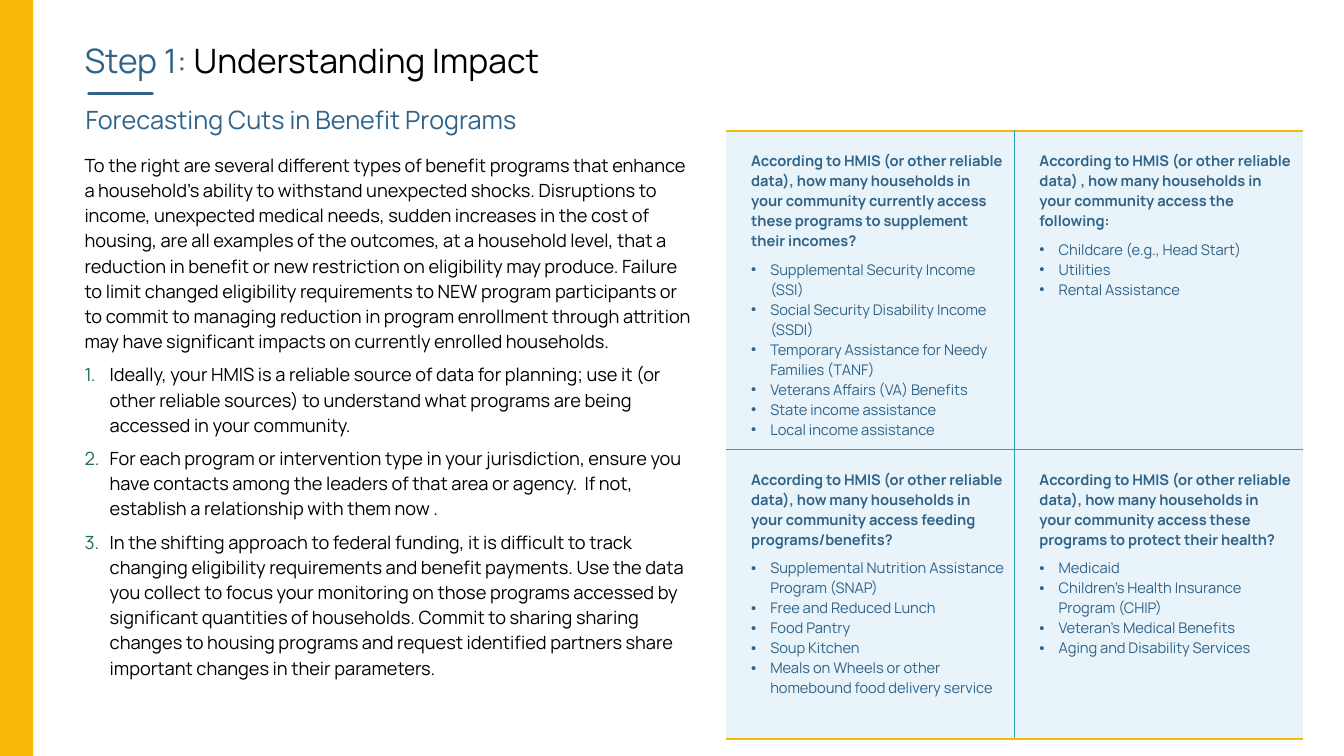
from lxml import etree
from pptx import Presentation
from pptx.dml.color import RGBColor
from pptx.enum.shapes import MSO_CONNECTOR, MSO_SHAPE
from pptx.enum.text import MSO_AUTO_SIZE
from pptx.oxml.ns import qn
from pptx.util import Inches, Pt

RECT = MSO_SHAPE.RECTANGLE
LINE = MSO_CONNECTOR.STRAIGHT
GROW = MSO_AUTO_SIZE.SHAPE_TO_FIT_TEXT
GOLD = RGBColor(0xF9, 0xB7, 0x08)
BLUE = RGBColor(0x30, 0x63, 0x8A)
TEAL = RGBColor(0x32, 0x9E, 0xBD)
GREEN = RGBColor(0x1E, 0x6E, 0x63)
PALE = RGBColor(0xE8, 0xF4, 0xFA)
BLACK = RGBColor(0, 0, 0)
FONT = "Manrope"
EDGE = (GOLD, 2.25)
RULE = (TEAL, 0.5)

INTRO = (
    "To the right are several different types of benefit programs that enhance a "
    "household’s ability to withstand unexpected shocks. Disruptions to income, "
    "unexpected medical needs, sudden increases in the cost of housing, are all "
    "examples of the outcomes, at a household level, that a reduction in benefit or "
    "new restriction on eligibility may produce. Failure to limit changed eligibility "
    "requirements to NEW program participants or to commit to managing reduction in "
    "program enrollment through attrition may have significant impacts on currently "
    "enrolled households."
)
STEPS = [
    "Ideally, your HMIS is a reliable source of data for planning; use it (or other "
    "reliable sources) to understand what programs are being accessed in your community.",
    "For each program or intervention type in your jurisdiction, ensure you have contacts "
    "among the leaders of that area or agency.  If not, establish a relationship with "
    "them now .",
    "In the shifting approach to federal funding, it is difficult to track changing "
    "eligibility requirements and benefit payments. Use the data you collect to focus "
    "your monitoring on those programs accessed by significant quantities of households. "
    "Commit to sharing sharing changes to housing programs and request identified "
    "partners share important changes in their parameters.",
]
ASK = "According to HMIS (or other reliable data)"
CELLS = [
    [
        (", how many households in your community currently access these programs to "
         "supplement their incomes?",
         ["Supplemental Security Income (SSI)",
          "Social Security Disability Income (SSDI)",
          "Temporary Assistance for Needy Families (TANF)",
          "Veterans Affairs (VA) Benefits",
          "State income assistance",
          "Local income assistance"]),
        (" , how many households in your community access the following:",
         ["Childcare (e.g., Head Start)", "Utilities", "Rental Assistance"]),
    ],
    [
        (", how many households in your community access feeding programs/benefits?",
         ["Supplemental Nutrition Assistance Program (SNAP)",
          "Free and Reduced Lunch",
          "Food Pantry",
          "Soup Kitchen",
          "Meals on Wheels or other homebound food delivery service"]),
        (", how many households in your community access these programs to protect "
         "their health?",
         ["Medicaid",
          "Children’s Health Insurance Program (CHIP)",
          "Veteran’s Medical Benefits",
          "Aging and Disability Services"]),
    ],
]


def add_run(para, text, size, color, bold=False):
    """Add one styled run to a paragraph."""
    run = para.add_run()
    run.text = text
    font = run.font
    font.name, font.size, font.bold = FONT, Pt(size), bold
    font.color.rgb = color


def add_para(frame, first=False, after=0, ls=None):
    """Return the first or a new paragraph with its spacing set."""
    para = frame.paragraphs[0] if first else frame.add_paragraph()
    para.space_after = Pt(after)
    if ls:
        para.line_spacing = ls
    return para


def set_mark(para, left, hang=0, char=None, color=None):
    """Indent a paragraph and give it a bullet or a number."""
    props = para._p.get_or_add_pPr()
    props.set("marL", str(Inches(left)))
    props.set("indent", str(Inches(-hang)))
    if color:
        fill = etree.SubElement(props, qn("a:buClr"))
        etree.SubElement(fill, qn("a:srgbClr"), val=str(color))
    if char:
        etree.SubElement(props, qn("a:buFont"), typeface="Arial")
        etree.SubElement(props, qn("a:buChar"), char=char)
    elif hang:
        etree.SubElement(props, qn("a:buFont"), typeface="+mj-lt")
        etree.SubElement(props, qn("a:buAutoNum"), type="arabicPeriod")


def add_box(slide, x, y, w, h, grow=False):
    """Add a wrapping text box and return its frame."""
    frame = slide.shapes.add_textbox(Inches(x), Inches(y), Inches(w), Inches(h)).text_frame
    frame.word_wrap = True
    if grow:
        frame.auto_size = GROW
    return frame


def add_bar(slide):
    """Add the gold bar along the left edge."""
    bar = slide.shapes.add_shape(RECT, 0, 0, Inches(0.33), Inches(7.5))
    bar.shadow.inherit = False
    bar.fill.solid()
    bar.fill.fore_color.rgb = GOLD
    bar.line.fill.background()


def add_rule(slide):
    """Add the short round-ended rule under the title."""
    y = Inches(0.93)
    rule = slide.shapes.add_connector(LINE, Inches(0.88), y, Inches(1.51), y)
    rule.line.color.rgb = BLUE
    rule.line.width = Pt(2.5)
    rule.line._get_or_add_ln().set("cap", "rnd")
    etree.SubElement(rule._element.spPr, qn("a:effectLst"))


def set_sides(cell, sides):
    """Draw the given cell borders and hide the others."""
    props = cell._tc.get_or_add_tcPr()
    for i, side in enumerate("LRTB"):
        line = etree.Element(qn(f"a:ln{side}"))
        if side in sides:
            color, width = sides[side]
            line.set("w", str(Pt(width)))
            fill = etree.SubElement(line, qn("a:solidFill"))
            etree.SubElement(fill, qn("a:srgbClr"), val=str(color))
        else:
            etree.SubElement(line, qn("a:noFill"))
        props.insert(i, line)


def fill_cell(cell, ask, items):
    """Fill one cell with a question and its bulleted programs."""
    cell.fill.solid()
    cell.fill.fore_color.rgb = PALE
    cell.margin_left = cell.margin_right = cell.margin_bottom = Inches(0.1)
    cell.margin_top = Inches(0.2)
    para = add_para(cell.text_frame, True, 6)
    set_mark(para, 0.15)
    add_run(para, ASK + ask, 10.5, BLUE, True)
    for item in items:
        para = add_para(cell.text_frame)
        set_mark(para, 0.34, 0.19, "•")
        add_run(para, item, 10.5, BLUE)


def add_grid(slide):
    """Add the two by two table of benefit programs."""
    table = slide.shapes.add_table(
        2, 2, Inches(7.2), Inches(1.3), Inches(5.72), Inches(5.91)).table
    table.first_row = table.horz_banding = False
    for row, high in zip(table.rows, (3.04, 2.87)):
        row.height = Inches(high)
    for r, row in enumerate(CELLS):
        for c, (ask, items) in enumerate(row):
            cell = table.cell(r, c)
            fill_cell(cell, ask, items)
            set_sides(cell, {"L" if c else "R": RULE,
                             "T": RULE if r else EDGE,
                             "B": EDGE if r else RULE})


def add_body(slide):
    """Add the introduction and the numbered steps."""
    frame = add_box(slide, 0.74, 1.45, 6.23, 5.83, True)
    add_run(add_para(frame, True, 6, 1.15), INTRO, 13, BLACK)
    for step in STEPS:
        para = add_para(frame, after=6, ls=1.15)
        set_mark(para, 0.25, 0.25, color=GREEN)
        add_run(para, step, 13, BLACK)


def main():
    """Build the slide and save it."""
    deck = Presentation()
    deck.slide_width, deck.slide_height = Inches(13.33), Inches(7.5)
    slide = deck.slides.add_slide(deck.slide_layouts[6])
    add_grid(slide)
    add_body(slide)
    title = add_para(add_box(slide, 0.74, 0.35, 12.38, 0.64), True)
    add_run(title, "Step 1: ", 24, BLUE)
    add_run(title, "Understanding Impact", 24, BLACK)
    add_bar(slide)
    add_rule(slide)
    head = add_para(add_box(slide, 0.75, 0.91, 6.67, 0.45, True), True, 12, 1.25)
    add_run(head, "Forecasting Cuts in Benefit Programs", 18, BLUE)
    deck.save("out.pptx")


if __name__ == "__main__":
    main()
